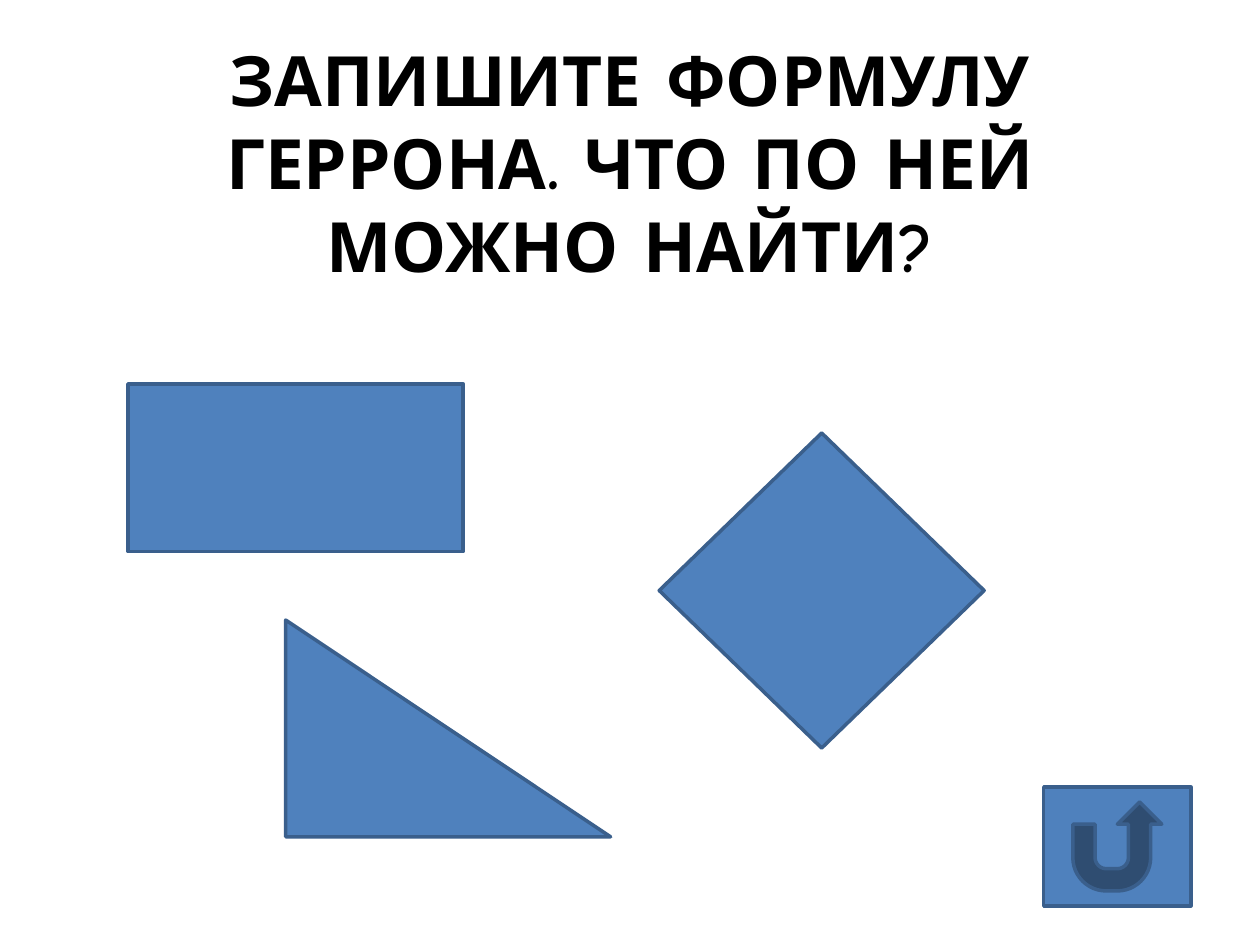
from dataclasses import dataclass
from pptx import Presentation
from pptx.dml.color import RGBColor as Rgb
from pptx.enum.shapes import MSO_SHAPE as Kind
from pptx.enum.text import MSO_ANCHOR as Anchor, PP_ALIGN as Align
from pptx.util import Cm, Pt


@dataclass(frozen=True)
class Theme:
    font: str = "Comic Neue"
    ink: Rgb = Rgb(0, 0, 0)
    fill: Rgb = Rgb(0x4F, 0x81, 0xBD)
    edge: Rgb = Rgb(0x3A, 0x5F, 0x8C)
    title: float = 39.6
    line: float = 2


class Board:
    def __init__(self, slide, theme):
        self.slide = slide
        self.theme = theme

    def title(self, text, *box):
        frame = self.slide.shapes.add_textbox(*map(Cm, box)).text_frame
        frame.word_wrap = True
        frame.vertical_anchor = Anchor.MIDDLE
        frame.text = text
        para = frame.paragraphs[0]
        para.alignment = Align.CENTER
        for run in para.runs:
            run.font.name = self.theme.font
            run.font.size = Pt(self.theme.title)
            run.font.bold = True
            run.font.color.rgb = self.theme.ink

    def figure(self, kind, *box):
        shape = self.slide.shapes.add_shape(kind, *map(Cm, box))
        shape.shadow.inherit = False
        shape.fill.solid()
        shape.fill.fore_color.rgb = self.theme.fill
        shape.line.color.rgb = self.theme.edge
        shape.line.width = Pt(self.theme.line)


def main():
    deck = Presentation()
    deck.slide_width, deck.slide_height = Cm(25.4), Cm(19.05)
    board = Board(deck.slides.add_slide(deck.slide_layouts[6]), Theme())
    board.title("ЗАПИШИТЕ ФОРМУЛУ ГЕРРОНА. ЧТО ПО НЕЙ МОЖНО НАЙТИ?",
                1.27, 0.76, 22.86, 5)
    board.figure(Kind.ACTION_BUTTON_RETURN, 21.04, 15.87, 2.97, 2.39)
    board.figure(Kind.RECTANGLE, 2.58, 7.74, 6.76, 3.38)
    board.figure(Kind.DIAMOND, 13.29, 8.73, 6.55, 6.35)
    board.figure(Kind.RIGHT_TRIANGLE, 5.76, 12.5, 6.55, 4.37)
    deck.save("out.pptx")


if __name__ == "__main__":
    main()
